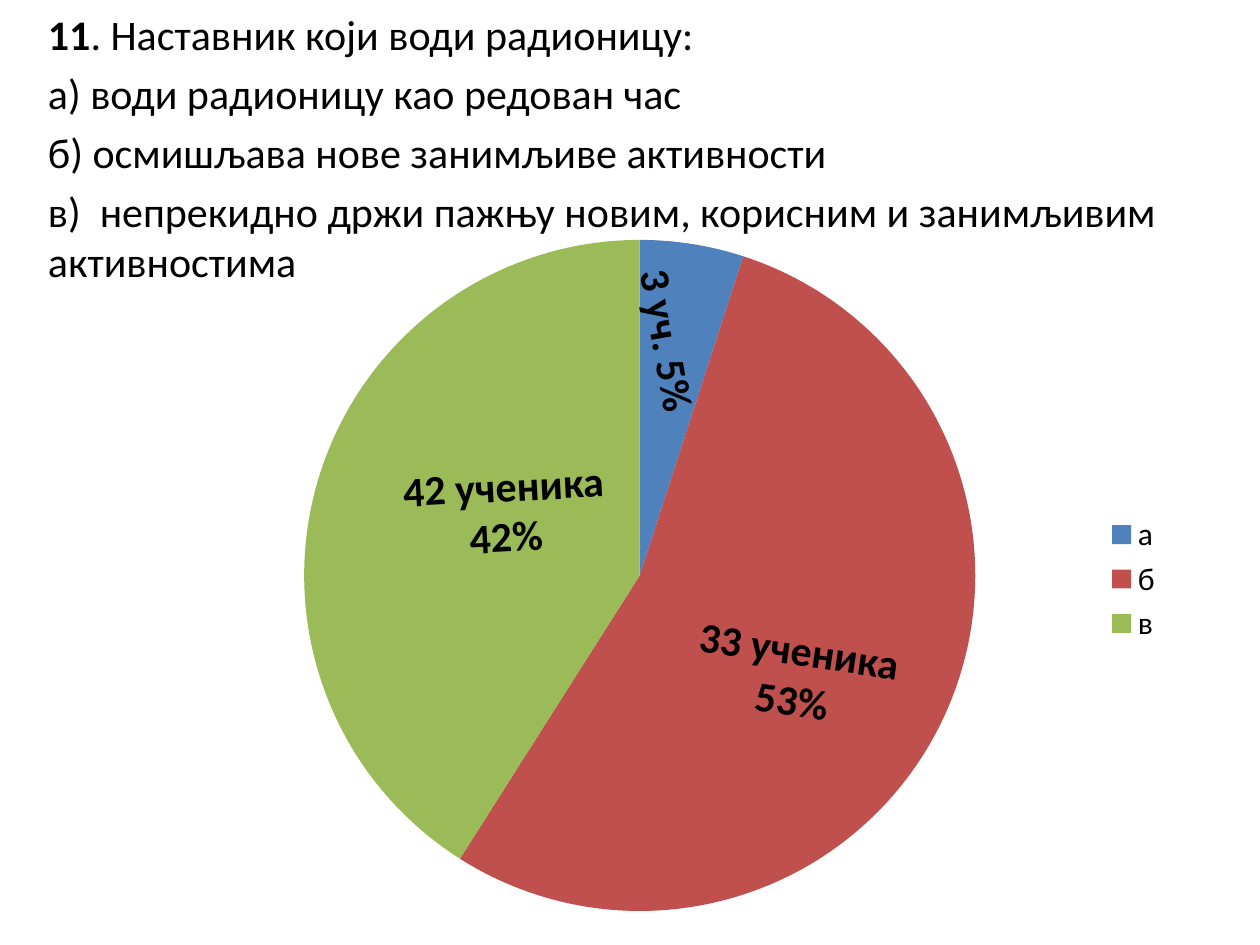
import pptx
import pptx.chart.data
import pptx.dml.color
import pptx.enum.chart
import pptx.enum.text
import pptx.oxml
import pptx.oxml.ns
import pptx.util

Pt = pptx.util.Pt
RGB = pptx.dml.color.RGBColor
Align = pptx.enum.text.PP_ALIGN
Fit = pptx.enum.text.MSO_AUTO_SIZE

# Content
FONT = "Calibri"
BLACK = RGB(0, 0, 0)
BLUE = RGB(0x4F, 0x81, 0xBD)
RED = RGB(0xC0, 0x50, 0x4D)
GREEN = RGB(0x9B, 0xBB, 0x59)

# Each line is a list of (text, bold) runs
LINES = [
    [("11", True), (". Наставник који води радионицу:", False)],
    [("а) води радионицу као редован час", False)],
    [("б) осмишљава нове занимљиве активности", False)],
    [("в)  непрекидно држи пажњу новим, корисним и занимљивим активностима",
      False)],
]
SLICES = [("а", 5, BLUE), ("б", 54, RED), ("в", 41, GREEN)]

# Lines, box (left, top, width, height), turn in degrees
LABELS = [
    (["3 уч. 5%"], (333.4, 176.4, 97.2, 36), 80.1),
    (["33 ученика", "53%"], (389.5, 352.8, 130.3, 65.5), 8.4),
    (["42 ученика", "42%"], (223.2, 259.2, 130.3, 65.5), 357),
]
CHART = (99.4, 128.2, 572.4, 405.4)
PIE = {"x": 0.13, "y": 0.02, "w": 0.67, "h": 0.95}


def write(frame, lines, size=24, align=Align.LEFT, before=0):
    """Fill a text frame with lines of (text, bold) runs."""
    for i, line in enumerate(lines):
        para = frame.paragraphs[0] if i == 0 else frame.add_paragraph()
        para.alignment = align
        para.space_before = Pt(before)
        for text, bold in line:
            run = para.add_run()
            run.text = text
            run.font.name = FONT
            run.font.size = Pt(size)
            run.font.bold = bold
            run.font.color.rgb = BLACK


def place(shape, box):
    shape.left, shape.top, shape.width, shape.height = map(Pt, box)


deck = pptx.Presentation()
deck.slide_width, deck.slide_height = Pt(720), Pt(540)
slide = deck.slides.add_slide(deck.slide_layouts[1])

# Question and answers
head = slide.shapes.title.element
head.getparent().remove(head)
body = slide.placeholders[1]
place(body, (20.2, 1.4, 699.8, 183.6))
body.text_frame.auto_size = Fit.NONE
write(body.text_frame, LINES, before=4.8)
for para in body.text_frame.paragraphs:
    props = para._p.get_or_add_pPr()
    props.set("marL", "0")
    props.set("indent", "0")
    props.append(pptx.oxml.parse_xml(
        f'<a:buNone {pptx.oxml.ns.nsdecls("a")}/>'))

# Pie chart
data = pptx.chart.data.CategoryChartData()
data.categories = [name for name, _, _ in SLICES]
data.add_series("Series 1", [value for _, value, _ in SLICES])
chart = slide.shapes.add_chart(
    pptx.enum.chart.XL_CHART_TYPE.PIE, *map(Pt, CHART), data).chart
chart.has_title = False
chart.font.name, chart.font.size = FONT, Pt(18)
chart.font.color.rgb = BLACK
chart.has_legend = True
chart.legend.position = pptx.enum.chart.XL_LEGEND_POSITION.RIGHT
chart.legend.include_in_layout = False
plot = chart.plots[0]
plot.vary_by_categories = True
for i, (_, _, color) in enumerate(SLICES):
    fill = plot.series[0].points[i].format.fill
    fill.solid()
    fill.fore_color.rgb = color

# Fixed size of the pie inside the chart
area = chart._chartSpace.chart.plotArea
for old in area.findall(pptx.oxml.ns.qn("c:layout")):
    area.remove(old)
sides = "".join(f'<c:{key} val="{val}"/>' for key, val in PIE.items())
area.insert(0, pptx.oxml.parse_xml(
    f'<c:layout {pptx.oxml.ns.nsdecls("c")}><c:manualLayout>'
    '<c:layoutTarget val="inner"/><c:xMode val="edge"/><c:yMode val="edge"/>'
    f'{sides}</c:manualLayout></c:layout>'))

# Turned labels on the slices
for lines, box, turn in LABELS:
    label = slide.shapes.add_textbox(*map(Pt, box))
    label.rotation = turn
    label.text_frame.word_wrap = False
    label.text_frame.auto_size = Fit.SHAPE_TO_FIT_TEXT
    write(label.text_frame, [[(line, True)] for line in lines],
          align=Align.CENTER)

deck.save("out.pptx")
